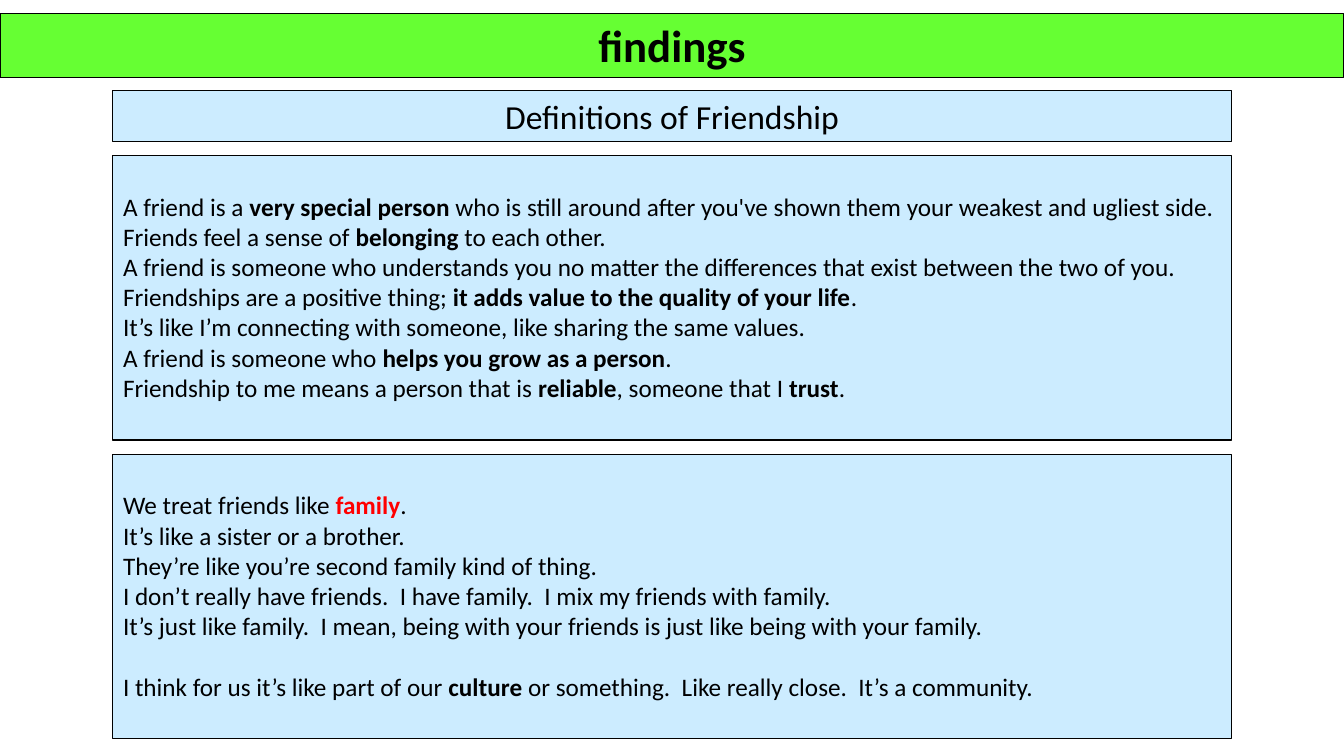
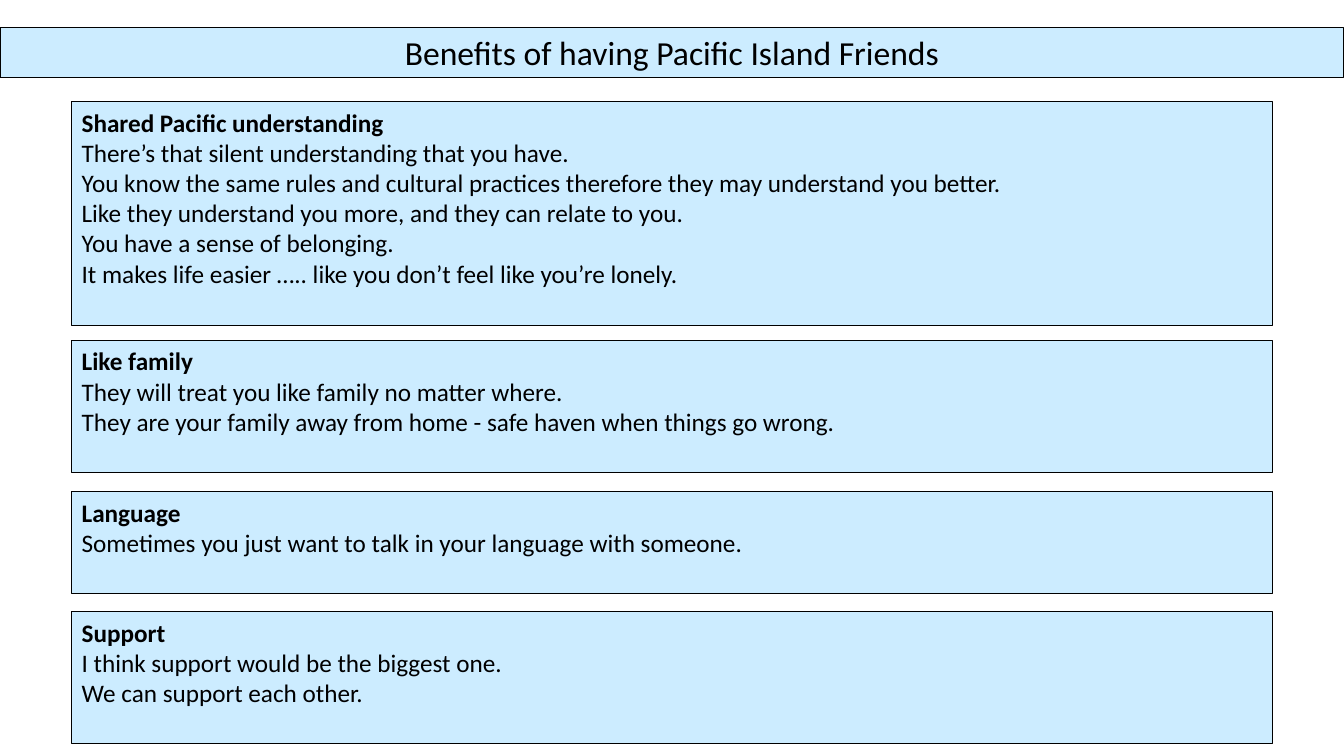
import dataclasses

import pptx
import pptx.dml.color
import pptx.enum.text
import pptx.oxml.ns
import pptx.util
from lxml import etree

Inches, Pt = pptx.util.Inches, pptx.util.Pt
RGB = pptx.dml.color.RGBColor.from_string
ALIGN = pptx.enum.text.PP_ALIGN


@dataclasses.dataclass(frozen=True)
class Theme:
    font: str = "Calibri"
    ink: str = "000000"
    accent: str = "FF0000"
    banner: str = "66FF33"
    panel: str = "CCECFF"
    banner_size: int = 32
    heading_size: int = 24
    text_size: int = 18
    line_pitch: float = 21.8  # points from one text line to the next
    outline: float = 0.75
    inset: float = 0.05
    heading_height: float = 0.5
    slide_width: float = 13.33
    slide_height: float = 7.5


THEME = Theme()
COMPARISON_LAYOUT = 4  # a title and four text areas

DEFINITIONS = [
    "A friend is a *very special person* who is still around after you've shown them your weakest and ugliest side.",
    "Friends feel a sense of *belonging* to each other.",
    "A friend is someone who understands you no matter the differences that exist between the two of you.",
    "Friendships are a positive thing; *it adds value to the quality of your life*.",
    "It’s like I’m connecting with someone, like sharing the same values.",
    "A friend is someone who *helps you grow as a person*.",
    "Friendship to me means a person that is *reliable*, someone that I *trust*.",
]
FAMILY = [
    "We treat friends like *family*.",
    "It’s like a sister or a brother.",
    "They’re like you’re second family kind of thing.",
    "I don’t really have friends.  I have family.  I mix my friends with family.",
    "It’s just like family.  I mean, being with your friends is just like being with your family.",
    "I think for us it’s like part of our *culture* or something.  Like really close.  It’s a community.",
]
# Top edge and lines of each benefit
BENEFITS = [
    (1.01, [
        "*Shared Pacific understanding*",
        "There’s that silent understanding that you have.",
        "You know the same rules and cultural practices therefore they may understand you better.",
        "Like they understand you more, and they can relate to you.",
        "You have a sense of belonging.",
        "It makes life easier ….. like you don’t feel like you’re lonely.",
    ]),
    (3.38, [
        "*Like family*",
        "They will treat you like family no matter where.",
        "They are your family away from home - safe haven when things go wrong.",
    ]),
    (4.88, [
        "*Language*",
        "Sometimes you just want to talk in your language with someone.",
    ]),
    (6.07, [
        "*Support*",
        "I think support would be the biggest one.",
        "We can support each other.",
    ]),
]


def panel_height(rows):
    return 2 * THEME.inset + rows * THEME.line_pitch / 72


def frame_box(box, top, width, height, fill):
    """Place a placeholder centred across the slide, filled and outlined."""
    box.left, box.top = Inches((THEME.slide_width - width) / 2), Inches(top)
    box.width, box.height = Inches(width), Inches(height)
    box.fill.solid()
    box.fill.fore_color.rgb = RGB(fill)
    box.line.color.rgb = RGB(THEME.ink)
    box.line.width = Pt(THEME.outline)
    frame = box.text_frame
    frame.auto_size = pptx.enum.text.MSO_AUTO_SIZE.NONE
    frame.word_wrap = True
    frame.vertical_anchor = pptx.enum.text.MSO_ANCHOR.TOP
    frame.margin_top = frame.margin_bottom = Inches(THEME.inset)


def write_line(paragraph, text, size, align=ALIGN.LEFT, accent=None):
    """Write one unbulleted line; phrases between asterisks are bold."""
    paragraph.alignment = align
    paragraph.space_before = Pt(0)
    properties = paragraph._p.get_or_add_pPr()
    properties.set("marL", "0")
    properties.set("indent", "0")
    etree.SubElement(properties, pptx.oxml.ns.qn("a:buNone"))
    for index, phrase in enumerate(text.split("*")):
        if not phrase:
            continue
        run = paragraph.add_run()
        run.text = phrase
        run.font.name = THEME.font
        run.font.size = Pt(size)
        run.font.bold = index % 2 == 1
        run.font.color.rgb = RGB(THEME.accent if phrase == accent else THEME.ink)


def fill_band(box, text, top, width, height=THEME.heading_height,
              size=THEME.heading_size, fill=THEME.panel):
    frame_box(box, top, width, height, fill)
    write_line(box.text_frame.paragraphs[0], text, size, ALIGN.CENTER)


def fill_panel(box, lines, top, width, rows, lead_rows=0, accent=None):
    frame_box(box, top, width, panel_height(rows), THEME.panel)
    frame = box.text_frame
    frame.margin_top = Inches(THEME.inset + lead_rows * THEME.line_pitch / 72)
    for index, text in enumerate(lines):
        paragraph = frame.paragraphs[0] if index == 0 else frame.add_paragraph()
        write_line(paragraph, text, THEME.text_size, accent=accent)


def new_slide(deck):
    """Return the title and the text areas of a new slide."""
    slide = deck.slides.add_slide(deck.slide_layouts[COMPARISON_LAYOUT])
    areas = [p for p in slide.placeholders if 1 <= p.placeholder_format.idx <= 4]
    return slide.shapes.title, areas


def build_findings(deck):
    title, (heading, definitions, family, unused) = new_slide(deck)
    unused.element.getparent().remove(unused.element)
    width, gap, rows = 11.09, 0.14, 9
    fill_band(title, "*findings*", 0.13, THEME.slide_width, 0.64,
              THEME.banner_size, THEME.banner)

    # Heading and two quote panels, stacked with equal gaps
    top = 0.9
    fill_band(heading, "Definitions of Friendship", top, width)
    top += THEME.heading_height + gap
    fill_panel(definitions, DEFINITIONS, top, width, rows, lead_rows=1)
    top += panel_height(rows) + gap
    fill_panel(family, FAMILY, top, width, rows, lead_rows=1, accent="family")
    family.text_frame.paragraphs[-1].space_before = Pt(THEME.line_pitch)


def build_benefits(deck):
    title, areas = new_slide(deck)
    fill_band(title, "Benefits of having Pacific Island Friends", 0.27, THEME.slide_width)

    # One panel per benefit, with a spare row below its lines
    for area, (top, lines) in zip(areas, BENEFITS):
        fill_panel(area, lines, top, 11.91, len(lines) + 1)


def main():
    deck = pptx.Presentation()
    deck.slide_width = Inches(THEME.slide_width)
    deck.slide_height = Inches(THEME.slide_height)
    build_findings(deck)
    build_benefits(deck)
    deck.save("out.pptx")


if __name__ == "__main__":
    main()
